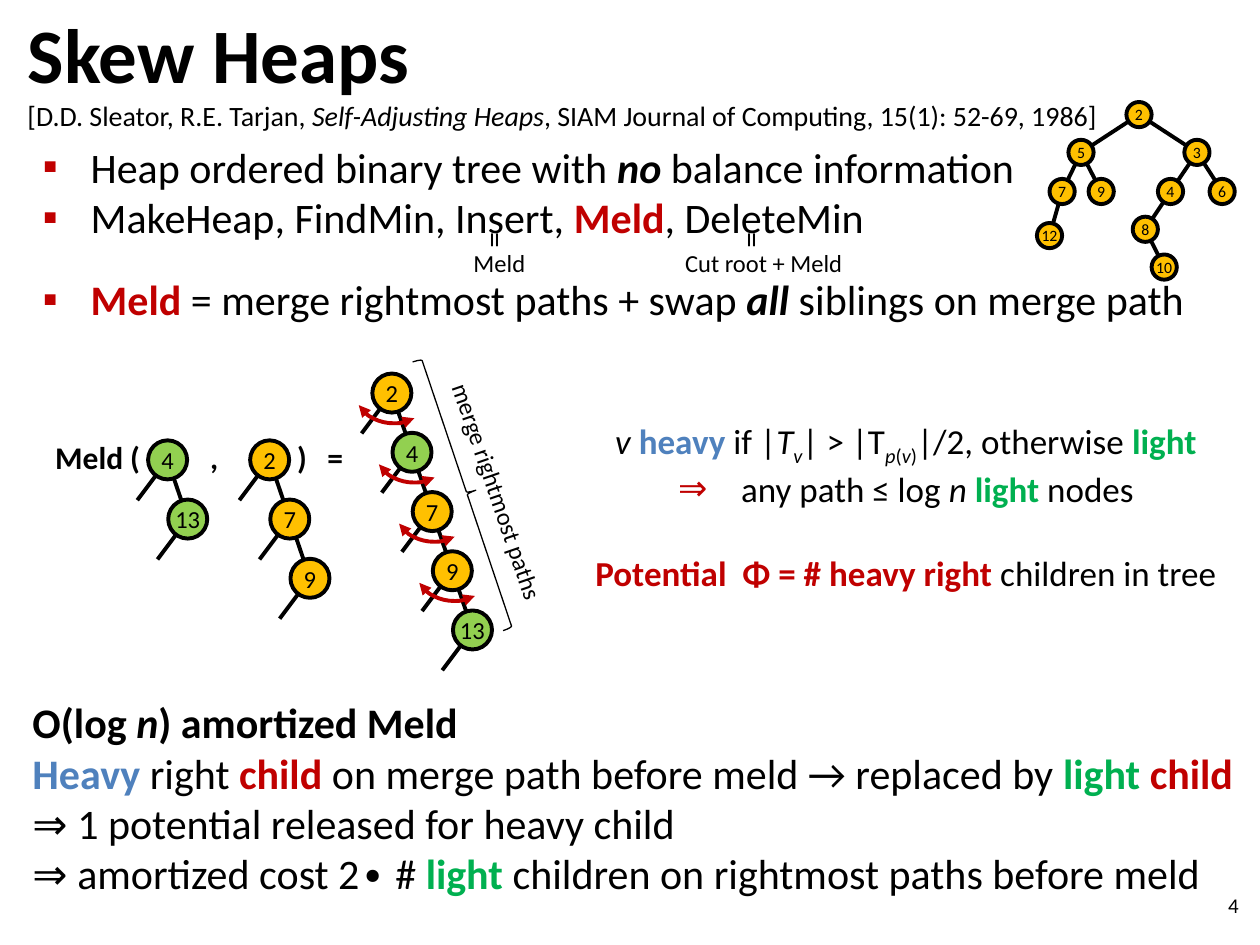
from lxml import etree
from pptx import Presentation
from pptx import util as u
from pptx.dml.color import RGBColor
from pptx.enum import shapes, text
from pptx.oxml import ns

FONT = "Calibri"
BLACK = RGBColor(0x00, 0x00, 0x00)
ORANGE = RGBColor(0xFF, 0xC0, 0x00)
LIME = RGBColor(0x92, 0xD0, 0x50)
RED = RGBColor(0xC0, 0x00, 0x00)
TEXT_COLOURS = {"red": RED, "blue": RGBColor(0x4F, 0x81, 0xBD),
                "green": RGBColor(0x00, 0xB0, 0x50)}
LEFT, CENTER, RIGHT = text.PP_ALIGN.LEFT, text.PP_ALIGN.CENTER, text.PP_ALIGN.RIGHT

# A paragraph is a list of runs: (text, style words)
TITLE = [[("Skew Heaps", "b")]]
CITATION = [[("[D.D. Sleator, R.E. Tarjan, ", ""), ("Self-Adjusting Heaps", "i"),
             (", SIAM Journal of Computing, 15(1): 52-69, 1986]", "")]]
BULLETS = [
    [("Heap ordered binary tree with ", ""), ("no ", "b i"), ("balance information", "")],
    [("MakeHeap, FindMin, Insert, ", ""), ("Meld", "b red"), (", DeleteMin", "")],
    [("Meld", "b red"), (" = merge rightmost paths + swap ", ""), ("all ", "b i"),
     ("siblings on merge path", "")],
]
POTENTIAL = [
    [("v ", "i"), ("heavy ", "b blue"), ("if |", ""), ("T", "i"), ("v", "i sub"),
     ("| > |T", ""), ("p", "i sub"), ("(", "sub"), ("v", "i sub"), (")", "sub"),
     ("|/2, otherwise ", ""), ("light", "b green")],
    [("any path ≤ log ", ""), ("n ", "i"), ("light ", "b green"), ("nodes", "")],
    [("Potential  Φ = # heavy right", "b red"), (" children in tree", "")],
]
ANALYSIS = [
    [("O(log ", "b"), ("n", "b i"), (") amortized Meld", "b")],
    [("Heavy", "b blue"), (" right ", ""), ("child ", "b red"),
     ("on merge path before meld → replaced by ", ""), ("light ", "b green"),
     ("child", "b red")],
    [("⇒ 1 potential released for heavy child", "")],
    [("⇒ amortized cost 2∙ # ", ""), ("light ", "b green"),
     ("children on rightmost paths before meld", "")],
]

# Rightmost paths: centre of the root, then (key, fill) downwards
MERGED = (3.11, 3.12), [(2, ORANGE), (4, LIME), (7, ORANGE), (9, ORANGE), (13, LIME)]
LEFT_HEAP = (1.33, 3.65), [(4, LIME), (13, LIME)]
RIGHT_HEAP = (2.14, 3.65), [(2, ORANGE), (7, ORANGE), (9, ORANGE)]
PATH_STEP = 0.16, 0.47
STUB = -0.24, 0.32

# Example heap: key -> (centre x, centre y, parent)
HEAP = {2: (9.04, 0.91, None), 5: (8.58, 1.21, 2), 3: (9.5, 1.21, 2),
        7: (8.43, 1.52, 5), 9: (8.74, 1.52, 5), 4: (9.29, 1.52, 3),
        6: (9.7, 1.52, 3), 12: (8.33, 1.87, 7), 8: (9.09, 1.82, 4),
        10: (9.24, 2.12, 8)}


def inches(*lengths):
    return [u.Inches(length) for length in lengths]


def fill_text(shape, paragraphs, size, align=LEFT):
    frame = shape.text_frame
    frame.word_wrap = True
    frame.auto_size = text.MSO_AUTO_SIZE.NONE
    for index, runs in enumerate(paragraphs):
        paragraph = frame.add_paragraph() if index else frame.paragraphs[0]
        paragraph.alignment = align
        paragraph.space_before = u.Pt(0)
        for content, style in runs:
            words = style.split()
            run = paragraph.add_run()
            run.text = content
            run.font.name, run.font.size = FONT, u.Pt(size)
            run.font.bold, run.font.italic = "b" in words, "i" in words
            run.font.color.rgb = next(
                (TEXT_COLOURS[word] for word in words if word in TEXT_COLOURS), BLACK)
            if "sub" in words:
                run._r.get_or_add_rPr().set("baseline", "-25000")
    return frame


def add_text(slide, box, paragraphs, size, align=LEFT, rotation=0):
    shape = slide.shapes.add_textbox(*inches(*box))
    shape.rotation = rotation
    return fill_text(shape, paragraphs, size, align)


def place(placeholder, box):
    placeholder.left, placeholder.top, placeholder.width, placeholder.height = inches(*box)


def set_bullet(paragraph, character, indent):
    properties = paragraph._p.get_or_add_pPr()
    properties.set("marL", str(u.Inches(indent)))
    properties.set("indent", str(-u.Inches(indent)))
    colour = etree.SubElement(properties, ns.qn("a:buClr"))
    etree.SubElement(colour, ns.qn("a:srgbClr"), val=str(RED))
    etree.SubElement(properties, ns.qn("a:buFont"), typeface=FONT)
    etree.SubElement(properties, ns.qn("a:buChar"), char=character)


def set_tabs(paragraph, *stops):
    tabs = etree.SubElement(paragraph._p.get_or_add_pPr(), ns.qn("a:tabLst"))
    for stop in stops:
        etree.SubElement(tabs, ns.qn("a:tab"), pos=str(u.Inches(stop)), algn="l")


def add_edge(parent, start, end):
    edge = parent.shapes.add_connector(shapes.MSO_CONNECTOR.STRAIGHT,
                                       *inches(*start, *end))
    edge.line.color.rgb, edge.line.width = BLACK, u.Pt(2.25)
    etree.SubElement(edge._element.spPr, ns.qn("a:effectLst"))


def add_node(parent, centre, key, fill, diameter, size):
    x, y = centre
    node = parent.shapes.add_shape(
        shapes.MSO_SHAPE.OVAL,
        *inches(x - diameter / 2, y - diameter / 2, diameter, diameter))
    node.shadow.inherit = False
    node.fill.solid()
    node.fill.fore_color.rgb = fill
    node.line.color.rgb, node.line.width = BLACK, u.Pt(2.25)
    frame = fill_text(node, [[(str(key), "")]], size, CENTER)
    frame.margin_left = frame.margin_right = 0
    frame.vertical_anchor = text.MSO_ANCHOR.MIDDLE


def add_outline(parent, kind, box, colour, width):
    shape = parent.shapes.add_shape(kind, *inches(*box))
    shape.shadow.inherit = False
    shape.fill.background()
    shape.line.color.rgb, shape.line.width = colour, u.Pt(width)
    return shape


def add_path(slide, root, nodes):
    """Draw a rightmost path with a stub for each left subtree; return the centres."""
    group = slide.shapes.add_group_shape()
    centres = [(root[0] + PATH_STEP[0] * level, root[1] + PATH_STEP[1] * level)
               for level in range(len(nodes))]
    for x, y in centres:
        add_edge(group, (x, y), (x + STUB[0], y + STUB[1]))
    add_edge(group, centres[0], centres[-1])
    for centre, (key, fill) in zip(centres, nodes):
        add_node(group, centre, key, fill, 0.31, 14)
    return centres


def add_swap_arrow(slide, centre):
    arrow = add_outline(slide, shapes.MSO_SHAPE.ARC,
                        (centre[0] - 0.3, centre[1] - 0.31, 0.63, 0.55), RED, 2.25)
    arrow.adjustments[0], arrow.adjustments[1] = 33.04, 92.81
    line = arrow.line._get_or_add_ln()
    for end in ("a:headEnd", "a:tailEnd"):
        etree.SubElement(line, ns.qn(end), type="triangle")


def add_heap(slide):
    group = slide.shapes.add_group_shape()
    for x, y, parent in HEAP.values():
        if parent:
            add_edge(group, HEAP[parent][:2], (x, y))
    for key, (x, y, parent) in HEAP.items():
        add_node(group, (x, y), key, ORANGE, 0.2, 9)


def main():
    presentation = Presentation()
    presentation.slide_width, presentation.slide_height = inches(10, 7.5)
    slide = presentation.slides.add_slide(presentation.slide_layouts[1])

    title, body = slide.placeholders
    place(title, (0.12, -0.09, 3.31, 1.02))
    fill_text(title, TITLE, 44).vertical_anchor = text.MSO_ANCHOR.MIDDLE
    place(body, (0.24, 1.07, 9.33, 1.65))
    bullets = fill_text(body, BULLETS, 24).paragraphs
    bullets[-1].line_spacing, bullets[-1].space_before = u.Pt(18), u.Pt(29)
    for paragraph in bullets:
        set_bullet(paragraph, "▪", 0.38)

    add_text(slide, (0.12, 0.73, 8.74, 0.43), CITATION, 16)
    number = add_text(slide, (7.6, 6.98, 2.33, 0.4), [[("4", "")]], 12, RIGHT)
    number.vertical_anchor = text.MSO_ANCHOR.MIDDLE
    costs = add_text(slide, (3.66, 1.92, 3.27, 0.34), [[("Meld\tCut root + Meld", "")]], 14)
    set_tabs(costs.paragraphs[0], 1.68)
    for left in (3.75, 5.79):
        add_text(slide, (left, 1.74, 0.39, 0.4), [[("=", "")]], 18, rotation=90)
    add_text(slide, (0.16, 5.48, 9.84, 1.72), ANALYSIS, 24)
    potential = add_text(slide, (4.61, 3.28, 5.16, 1.45), POTENTIAL, 20, CENTER).paragraphs
    potential[-1].space_before = u.Pt(24)
    set_bullet(potential[1], "⇒", 0.5)

    equation = add_text(slide, (0.34, 3.43, 2.54, 0.4), [[("Meld (\t,\t)\t=", "b")]], 18)
    set_tabs(equation.paragraphs[0], 1.23, 1.92, 2.16)
    for path in (LEFT_HEAP, RIGHT_HEAP):
        add_path(slide, *path)
    for centre in add_path(slide, *MERGED)[:-1]:
        add_swap_arrow(slide, centre)
    brace = add_outline(slide, shapes.MSO_SHAPE.LEFT_BRACE,
                        (3.63, 2.79, 0.15, 2.25), BLACK, 0.75)
    brace.rotation = 161.4
    add_text(slide, (2.88, 3.73, 2.13, 0.34), [[("merge rightmost paths", "")]], 14,
             CENTER, rotation=71)
    add_heap(slide)
    presentation.save("out.pptx")


if __name__ == "__main__":
    main()
